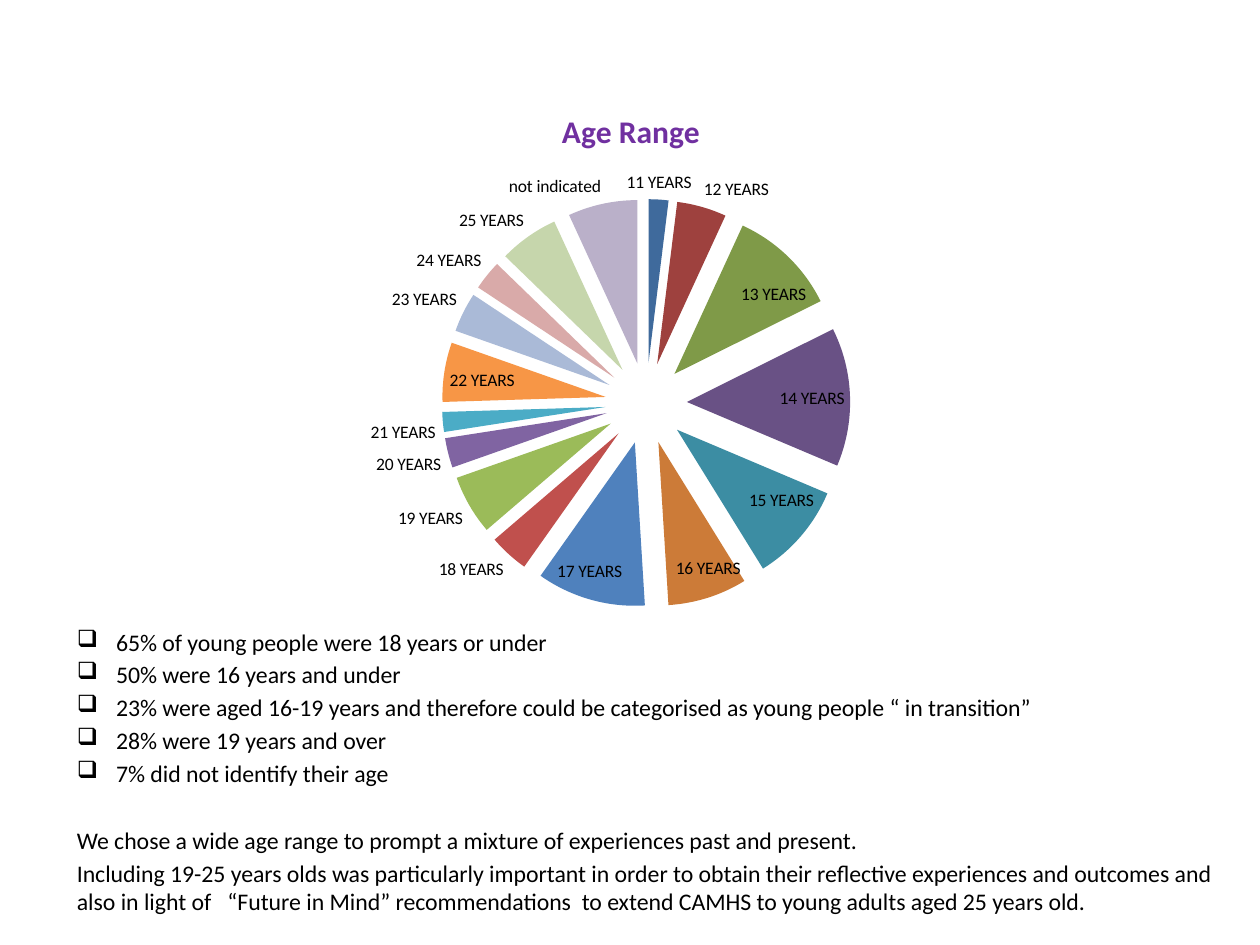
from dataclasses import dataclass

from lxml.etree import SubElement
from pptx import Presentation
from pptx.chart.data import CategoryChartData
from pptx.dml.color import RGBColor
from pptx.enum.chart import XL_CHART_TYPE, XL_LABEL_POSITION
from pptx.oxml import parse_xml
from pptx.oxml.ns import nsdecls, qn
from pptx.util import Cm, Pt

FONT = "Calibri"
BLACK = "000000"
PURPLE = "7030A0"


@dataclass(frozen=True)
class AgeGroup:
    label: str
    share: int
    color: str


@dataclass(frozen=True)
class Finding:
    text: str
    bulleted: bool = True
    space_before: float = 2.5


AGE_GROUPS = [
    AgeGroup("11 YEARS", 2, "3F6A9C"),
    AgeGroup("12 YEARS", 5, "9E413E"),
    AgeGroup("13 YEARS", 11, "7F9A48"),
    AgeGroup("14 YEARS", 14, "695185"),
    AgeGroup("15 YEARS", 10, "3C8DA3"),
    AgeGroup("16 YEARS", 8, "CC7B38"),
    AgeGroup("17 YEARS", 11, "4F81BD"),
    AgeGroup("18 YEARS", 4, "C0504D"),
    AgeGroup("19 YEARS", 6, "9BBB59"),
    AgeGroup("20 YEARS", 3, "8064A2"),
    AgeGroup("21 YEARS", 2, "4BACC6"),
    AgeGroup("22 YEARS", 6, "F79646"),
    AgeGroup("23 YEARS", 4, "AABAD7"),
    AgeGroup("24 YEARS", 3, "D9AAA9"),
    AgeGroup("25 YEARS", 6, "C6D6AC"),
    AgeGroup("not indicated", 7, "BAB0C9"),
]

FINDINGS = [
    Finding("65% of young people were 18 years or under", space_before=0),
    Finding("50% were 16 years and under"),
    Finding("23% were aged 16-19 years and therefore could be categorised as "
            "young people “ in transition”"),
    Finding("28% were 19 years and over"),
    Finding("7% did not identify their age"),
    Finding("We chose a wide age range to prompt a mixture of experiences "
            "past and present.", bulleted=False, space_before=21.6),
    Finding("Including 19-25 years olds was particularly important in order to "
            "obtain their reflective experiences and outcomes and also in light "
            "of   “Future in Mind” recommendations  to extend CAMHS to young "
            "adults aged 25 years old.", bulleted=False),
]


def style_font(font, size: float, color: str, bold: bool = False) -> None:
    font.name = FONT
    font.size = Pt(size)
    font.bold = bold
    font.color.rgb = RGBColor.from_string(color)


def place_plot(chart, x: float, y: float, width: float, height: float) -> None:
    plot_area = chart._chartSpace.chart.plotArea
    for existing in plot_area.findall(qn("c:layout")):
        plot_area.remove(existing)
    plot_area.insert(0, parse_xml(
        f'<c:layout {nsdecls("c")}><c:manualLayout>'
        '<c:layoutTarget val="inner"/>'
        '<c:xMode val="edge"/><c:yMode val="edge"/>'
        f'<c:x val="{x}"/><c:y val="{y}"/>'
        f'<c:w val="{width}"/><c:h val="{height}"/>'
        '</c:manualLayout></c:layout>'))


def explode(series, percent: int) -> None:
    first_point = series._element.find(qn("c:dPt"))
    first_point.addprevious(
        parse_xml(f'<c:explosion {nsdecls("c")} val="{percent}"/>'))


def add_age_pie(slide, groups: list[AgeGroup]) -> None:
    shares = CategoryChartData()
    shares.categories = [group.label for group in groups]
    shares.add_series("Series 1", [group.share for group in groups])
    chart = slide.shapes.add_chart(
        XL_CHART_TYPE.PIE, Cm(5.1), Cm(1.73), Cm(15.24), Cm(11.43), shares).chart
    style_font(chart.font, 10, BLACK)
    chart.has_legend = False
    chart.has_title = True
    heading = chart.chart_title.text_frame.paragraphs[0].add_run()
    heading.text = "Age Range"
    style_font(heading.font, 18, PURPLE, bold=True)

    pie = chart.plots[0]
    pie.vary_by_categories = True
    pie.has_data_labels = True
    labels = pie.data_labels
    labels.show_category_name = True
    labels.show_value = False
    labels.show_percentage = False
    labels.position = XL_LABEL_POSITION.BEST_FIT
    style_font(labels.font, 10, BLACK)

    series = pie.series[0]
    for index, group in enumerate(groups):
        fill = series.points[index].format.fill
        fill.solid()
        fill.fore_color.rgb = RGBColor.from_string(group.color)
    explode(series, 25)
    place_plot(chart, 0.25, 0.2, 0.54, 0.72)


def add_bullet(paragraph) -> None:
    properties = paragraph._p.get_or_add_pPr()
    indent = Cm(0.79)
    properties.set("marL", str(indent))
    properties.set("indent", str(-indent))
    SubElement(properties, qn("a:buChar")).set("char", "❑")


def add_findings(slide, findings: list[Finding]) -> None:
    frame = slide.shapes.add_textbox(
        Cm(1.3), Cm(12.52), Cm(23.4), Cm(5.41)).text_frame
    frame.word_wrap = True
    for index, finding in enumerate(findings):
        paragraph = frame.add_paragraph() if index else frame.paragraphs[0]
        paragraph.space_before = Pt(finding.space_before)
        if finding.bulleted:
            add_bullet(paragraph)
        run = paragraph.add_run()
        run.text = finding.text
        style_font(run.font, 13.6, BLACK)


def main() -> None:
    presentation = Presentation()
    presentation.slide_width = Cm(25.4)
    presentation.slide_height = Cm(19.05)
    slide = presentation.slides.add_slide(presentation.slide_layouts[6])
    add_findings(slide, FINDINGS)
    add_age_pie(slide, AGE_GROUPS)
    presentation.save("out.pptx")


if __name__ == "__main__":
    main()
